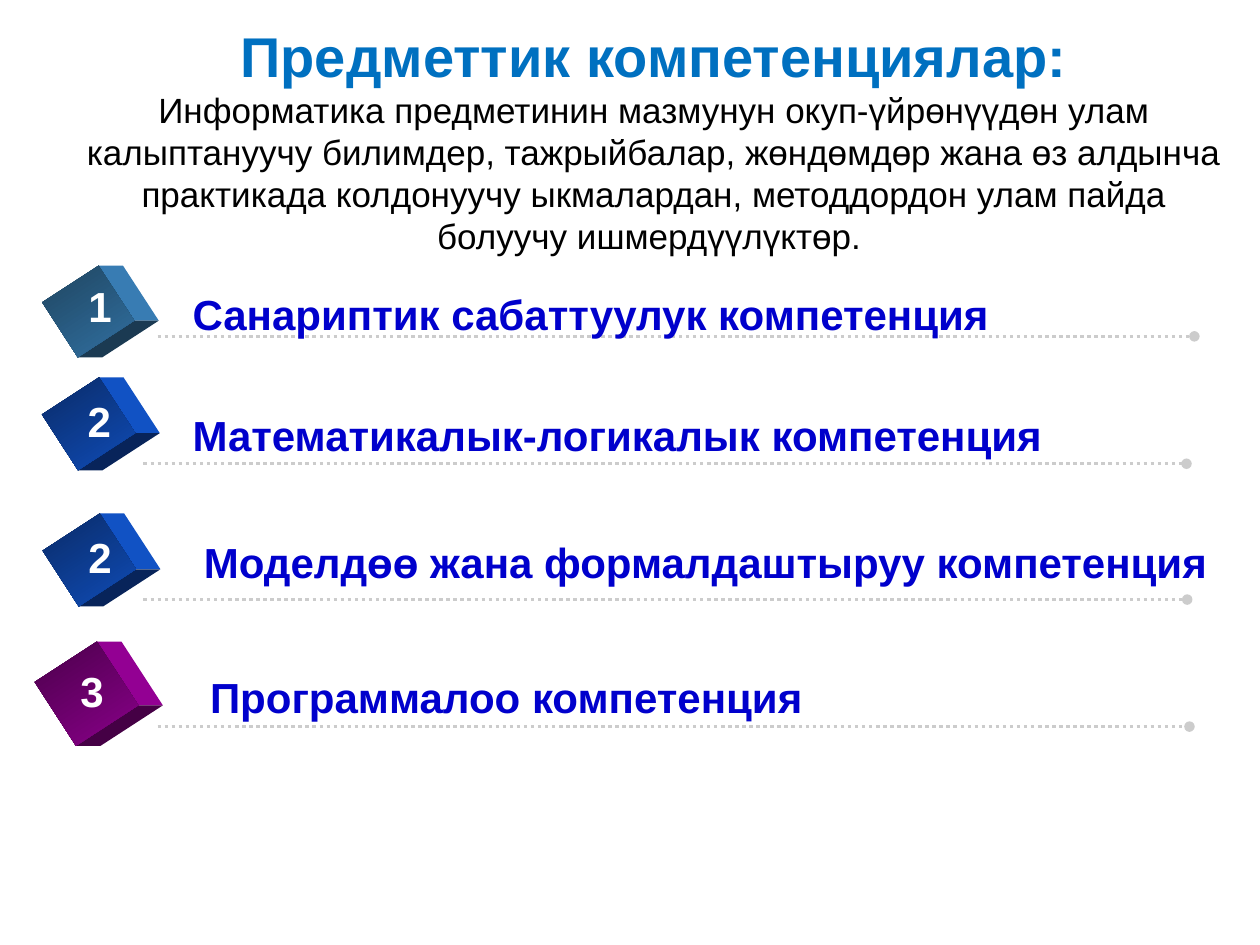
"""Build a slide listing the subject competencies, each numbered by a cube."""
import math

import pptx
import pptx.chart.data
import pptx.dml.color
import pptx.enum.dml
import pptx.enum.shapes
import pptx.enum.text
import pptx.oxml.ns
import pptx.util
from lxml import etree

Pt = pptx.util.Pt
RGBColor = pptx.dml.color.RGBColor
ALIGN = pptx.enum.text.PP_ALIGN
ANCHOR = pptx.enum.text.MSO_ANCHOR
qn = pptx.oxml.ns.qn

TITLE_BLUE = RGBColor(0x00, 0x70, 0xC0)
LABEL_BLUE = RGBColor(0x00, 0x00, 0xCC)
RULE_GREY = RGBColor(0xCC, 0xCC, 0xCC)
WHITE = RGBColor(0xFF, 0xFF, 0xFF)
BLACK = RGBColor(0x00, 0x00, 0x00)
STEEL = (RGBColor(0x1F, 0x45, 0x60), RGBColor(0x31, 0x70, 0xA1),
         RGBColor(0x38, 0x7C, 0xB3), RGBColor(0x1B, 0x3A, 0x52))
BLUE = (RGBColor(0x0A, 0x2B, 0x66), RGBColor(0x0F, 0x4C, 0xB8),
        RGBColor(0x11, 0x52, 0xC4), RGBColor(0x08, 0x24, 0x5A))
PURPLE = (RGBColor(0x4A, 0x00, 0x4A), RGBColor(0x8A, 0x00, 0x8A),
          RGBColor(0x93, 0x00, 0x93), RGBColor(0x45, 0x00, 0x45))

TILT = 57
DEPTH = 14

deck = pptx.Presentation()
deck.slide_width, deck.slide_height = Pt(720), Pt(540)
slide = deck.slides.add_slide(deck.slide_layouts[6])
shapes = slide.shapes


def add_label(text, left, top, width, color, align, wrap=True):
    box = shapes.add_textbox(Pt(left), Pt(top), Pt(width), Pt(36))
    box.text_frame.word_wrap = wrap
    paragraph = box.text_frame.paragraphs[0]
    paragraph.text = text
    paragraph.alignment = align
    paragraph.font.name = "Arial"
    paragraph.font.size = Pt(24)
    paragraph.font.bold = True
    paragraph.font.color.rgb = color


def add_face(points, color):
    outline = shapes.build_freeform(Pt(points[0][0]), Pt(points[0][1]))
    outline.add_line_segments([(Pt(x), Pt(y)) for x, y in points[1:]])
    face = outline.convert_to_shape()
    face.shadow.inherit = False
    face.fill.solid()
    face.fill.fore_color.rgb = color
    face.line.fill.background()


heading = shapes.add_textbox(Pt(38.2), Pt(100), Pt(671), Pt(54)).text_frame
heading.word_wrap = True
heading.vertical_anchor = ANCHOR.BOTTOM
heading.margin_left = heading.margin_right = Pt(7.2)
heading.margin_top = heading.margin_bottom = Pt(7.2)
heading_line = heading.paragraphs[0]
heading_line.alignment = ALIGN.CENTER
heading_line.font.name = "Arial"
title = heading_line.add_run()
title.text = "Предметтик компетенциялар:"
title.font.size = Pt(32)
title.font.bold = True
title.font.color.rgb = TITLE_BLUE
heading_line.add_line_break()
summary = heading_line.add_run()
summary.text = ("Информатика предметинин мазмунун окуп-үйрөнүүдөн улам калыптануучу "
                "билимдер, тажрыйбалар, жөндөмдөр жана өз алдынча практикада колдонуучу "
                "ыкмалардан, методдордон улам пайда болуучу ишмердүүлүктөр. ")
summary.font.size = Pt(20)
summary.font.color.rgb = BLACK
for run in (title, summary):
    run.font.name = "Arial"

competencies = [
    ("1", "Санариптик сабаттуулук компетенция", STEEL, (50.4, 178), (37.5, 38.5),
     (57.2, 175), (103, 161.3, 534), ALIGN.LEFT, (90, 682.5, 192.2)),
    ("2", "Математикалык-логикалык компетенция", BLUE, (50.6, 242.2), (38, 39),
     (56.8, 240.5), (103, 230.4, 554), ALIGN.LEFT, (82, 678, 265)),
    ("2", "Моделдөө жана формалдаштыруу компетенция", BLUE, (51, 320), (38, 39),
     (57.2, 318.2), (109.4, 303.1, 606), ALIGN.LEFT, (82, 678.4, 342.6)),
    ("3", "Программалоо компетенция ", PURPLE, (49.4, 396.4), (43.5, 42.5),
     (52.6, 394.6), (87.1, 380.2, 411), ALIGN.CENTER, (90, 679.7, 415.2)),
]

cos, sin = math.cos(math.radians(TILT)), math.sin(math.radians(TILT))

for number, name, tones, center, size, digit, label, align, rule in competencies:
    rule_left, rule_right, rule_y = rule
    line = shapes.add_connector(pptx.enum.shapes.MSO_CONNECTOR.STRAIGHT,
                                Pt(rule_left), Pt(rule_y), Pt(rule_right), Pt(rule_y))
    line.line.color.rgb = RULE_GREY
    line.line.width = Pt(2)
    line.line.dash_style = pptx.enum.dml.MSO_LINE.ROUND_DOT
    etree.SubElement(line.line._get_or_add_ln(), qn("a:tailEnd"), type="oval")
    etree.SubElement(line._element.spPr, qn("a:effectLst"))

    x, y = center
    width, height = size
    top, right, bottom = [
        (x + (dx * width * cos - dy * height * sin) / 2,
         y + (dx * width * sin + dy * height * cos) / 2)
        for dx, dy in ((-1, -1), (1, -1), (1, 1))]
    top_back, right_back, bottom_back = [
        (px + DEPTH, py) for px, py in (top, right, bottom)]
    dark, bright, side, under = tones
    add_face([top, top_back, right_back, right], side)
    add_face([right, right_back, bottom_back, bottom], under)

    front = shapes.add_shape(pptx.enum.shapes.MSO_SHAPE.RECTANGLE, Pt(x - width / 2),
                             Pt(y - height / 2), Pt(width), Pt(height))
    front.rotation = TILT
    front.shadow.inherit = False
    front.line.fill.background()
    front.fill.gradient()
    front.fill.gradient_angle = 0
    for stop, tone in zip(front.fill.gradient_stops, (dark, bright)):
        stop.color.rgb = tone

    digit_x, digit_y = digit
    add_label(number, digit_x - 14, digit_y - 18, 28, WHITE, ALIGN.CENTER, wrap=False)
    add_label(name, *label, LABEL_BLUE, align)

deck.save("out.pptx")
